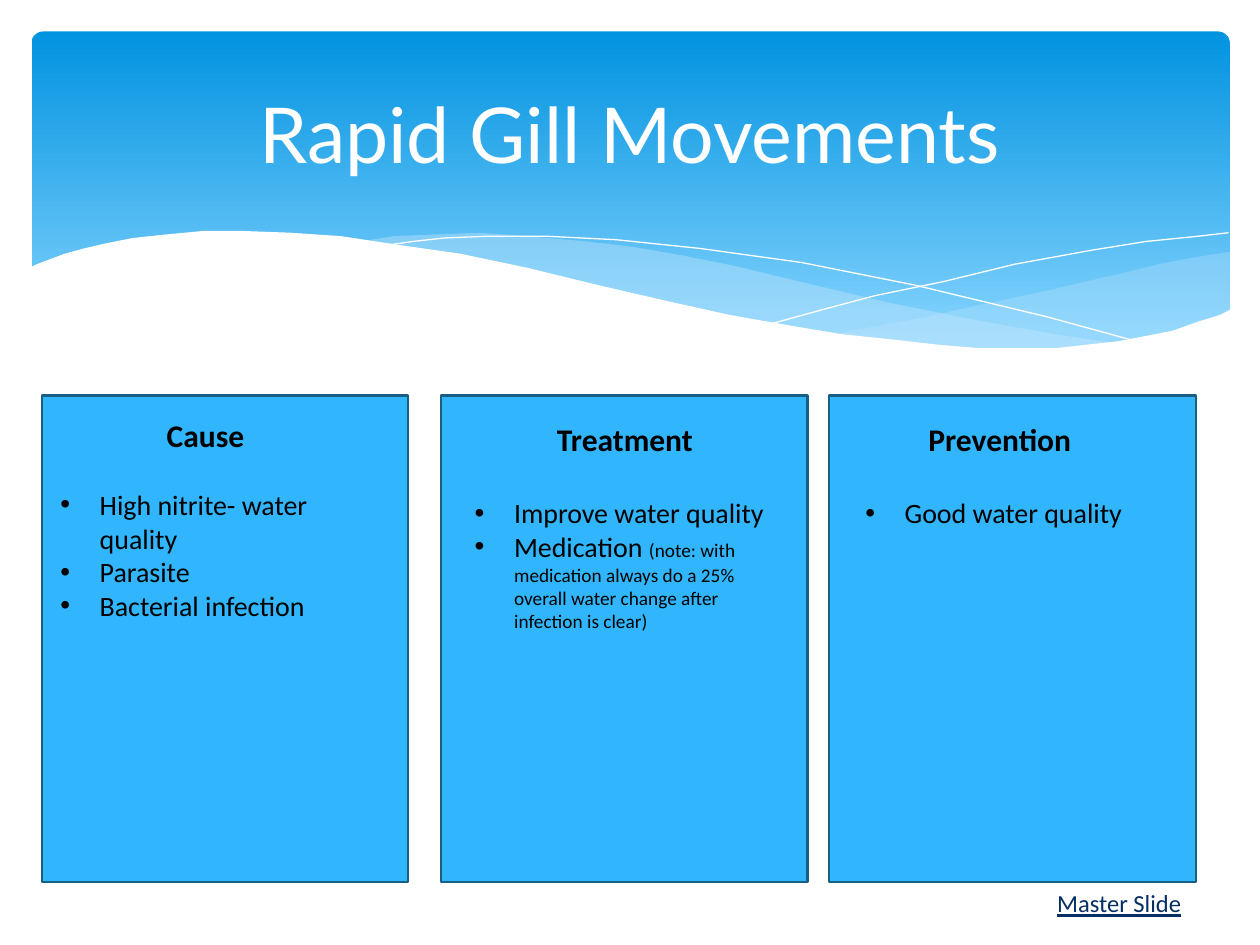
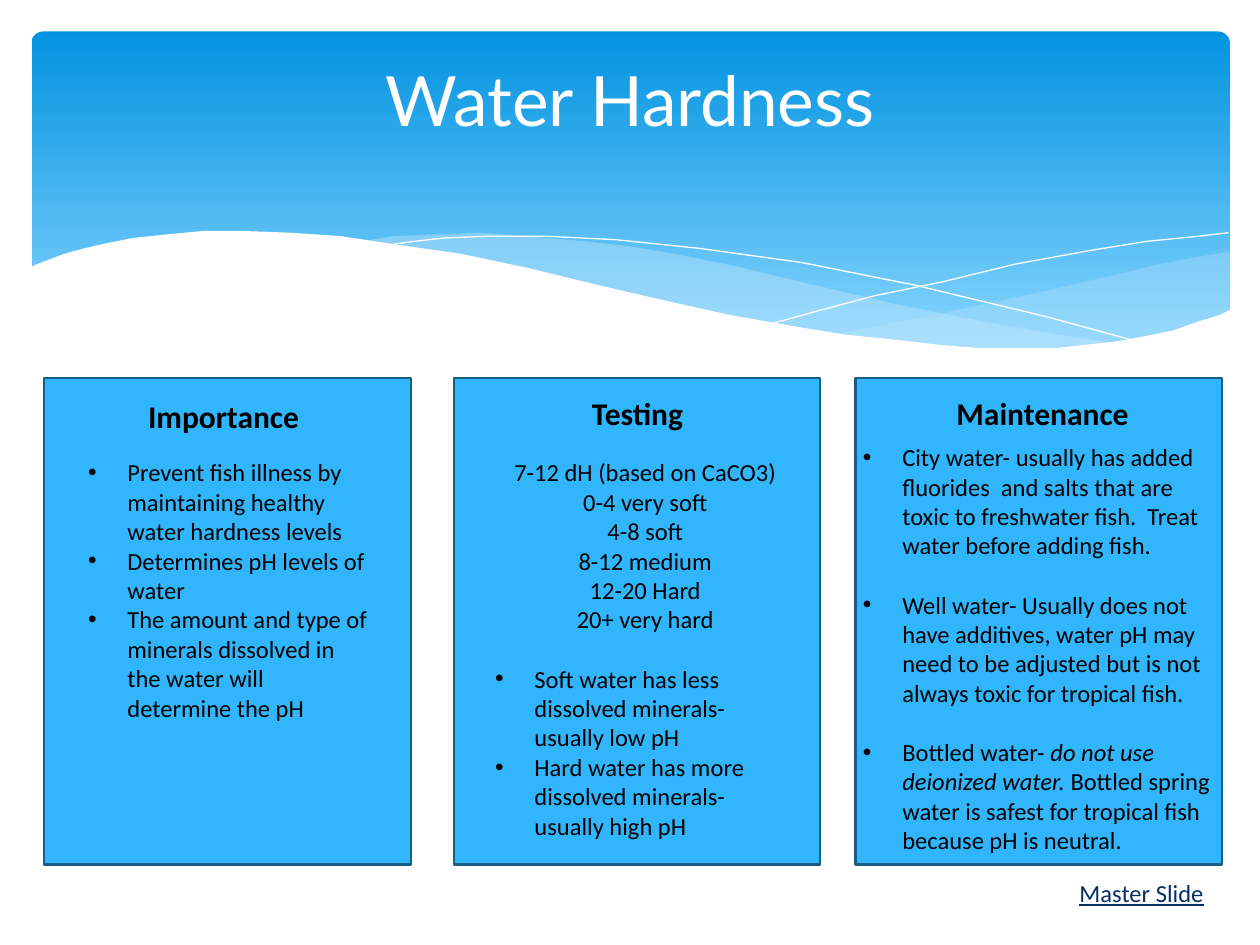
from lxml import etree
from pptx import Presentation
from pptx.dml.color import RGBColor
from pptx.enum.shapes import MSO_SHAPE
from pptx.enum.text import MSO_ANCHOR, PP_ALIGN
from pptx.oxml.ns import qn
from pptx.util import Pt


def rgb(value):
    return RGBColor.from_string(value)


def add_text(s, box, paras, face="Calibri", color="000000", anchor=MSO_ANCHOR.TOP):
    tf = s.shapes.add_textbox(*map(Pt, box)).text_frame
    tf.word_wrap = True
    tf.vertical_anchor = anchor
    for i, (kind, gap, runs) in enumerate(paras):
        p = tf.paragraphs[0] if i == 0 else tf.add_paragraph()
        p.alignment = PP_ALIGN.CENTER if kind == "center" else PP_ALIGN.LEFT
        p.space_before = Pt(gap)
        if kind == "bullet":
            pPr = p._p.get_or_add_pPr()
            pPr.set("marL", str(Pt(22.5)))
            pPr.set("indent", str(-Pt(22.5)))
            etree.SubElement(pPr, qn("a:buFont")).set("typeface", "Arial")
            etree.SubElement(pPr, qn("a:buChar")).set("char", "•")
        for text, fmt in runs:
            r = p.add_run()
            r.text = text
            r.font.name = face
            r.font.color.rgb = rgb(color)
            for name, value in fmt.items():
                setattr(r.font, name, value)


HEAD = {"size": Pt(18), "bold": True}
BODY = {"size": Pt(16)}
NOTE = {"size": Pt(11)}
SMALL = {"size": Pt(14)}
ITALIC = {"size": Pt(14), "italic": True}
LINK = {"size": Pt(14), "underline": True}

right_wave = [
    (702, 144), (682.6, 146.9), (662.4, 151.2), (641.5, 155.5), (619.9, 160.6),
    (599, 165.6), (560.9, 174.2), (524.9, 182.2), (475.9, 190.8), (507.6, 194.4),
    (536.4, 197.3), (562.3, 199.4), (586.1, 200.2), (608.4, 199.4), (627.8, 197.3),
    (645.8, 194.4), (663.1, 190.8), (678.2, 186.5), (702.7, 177.8), (702.7, 144)]
middle_wave = [
    (643, 196.6), (602.6, 190.8), (558, 182.9), (508.3, 172.8), (452.9, 159.8),
    (420.5, 151.9), (389.5, 146.2), (361.4, 141.1), (334.8, 137.5), (302.4, 134.6),
    (273.6, 133.2), (247.7, 133.9), (225.4, 135.4), (205.9, 137.5), (232.6, 141.1),
    (260.6, 146.2), (290.9, 151.9), (323.3, 159.8), (381.6, 172.8), (432.7, 183.6),
    (478.8, 191.5), (520.6, 197.3), (556.6, 199.4), (588.9, 200.2), (617.8, 199.4)]
falling_line = [
    (222.5, 140.4), (236.2, 138.2), (254.2, 136.1), (278.6, 134.6), (311.8, 134.6),
    (352.1, 136.8), (400.3, 141.8), (457.9, 149.8), (523.4, 162.7), (598.3, 180.7),
    (653, 195.8)]
rising_line = [
    (441.4, 185), (470.2, 177.1), (500.4, 169.2), (538.6, 160.6), (580.3, 151.2),
    (623.5, 143.3), (655.2, 138.2), (684.7, 134.6), (702, 133.2)]
white_wave = [
    (16.6, 153.4), (20.9, 151.2), (28.8, 147.6), (37.4, 144.7), (48.2, 141.8),
    (61.2, 139), (76.3, 136.1), (95, 133.9), (115.9, 132.5), (139, 132.5),
    (165.6, 133.2), (195.1, 135.4), (227.5, 139.7), (262.8, 145.4), (301, 153.4),
    (342, 163.4), (380.9, 172.1), (416.9, 180), (450.7, 185.8), (481, 190.8),
    (509.8, 194.4), (535.7, 197.3), (560.2, 198.7), (582.5, 199.4), (602.6, 198.7),
    (621.4, 197.3), (638.6, 195.1), (655.2, 192.2), (669.6, 188.6), (684, 184.3),
    (697, 180), (703.4, 177.1), (703.4, 236.9), (16.6, 236.9)]
waves = [
    (right_wave, "C6E7FC", 29),
    (middle_wave, "C6E7FC", 40),
    (falling_line, None, None),
    (rising_line, None, None),
    (white_wave, "FFFFFF", 100)]

slides = [
    {
        "title": ("Rapid Gill Movements", 44, (36, 26.6, 648, 98.6), MSO_ANCHOR.MIDDLE),
        "cards": (226, [23.8, 252, 473.8]),
        "link": (597, 504),
        "texts": [
            ((27.4, 234, 180, 147.6), [
                ("center", 0, [("Cause", HEAD)]),
                ("bullet", 19.5, [("High nitrite- water quality", BODY)]),
                ("bullet", 0, [("Parasite", BODY)]),
                ("bullet", 0, [("Bacterial infection", BODY)])]),
            ((264.2, 236.2, 185.8, 200), [
                ("center", 0, [("Treatment", HEAD)]),
                ("bullet", 22, [("Improve water quality", BODY)]),
                ("bullet", 0, [
                    ("Medication ", BODY),
                    ("(note: with medication always do a 25% overall water change "
                     "after infection is clear)", NOTE)])]),
            ((487.4, 236.2, 167.8, 70.6), [
                ("center", 0, [("Prevention", HEAD)]),
                ("bullet", 22, [("Good water quality", BODY)])]),
        ],
    },
    {
        "title": ("Water Hardness", 39.6, (36, 29, 648, 96), MSO_ANCHOR.TOP),
        "cards": (216, [25.2, 259.2, 488.9]),
        "link": (609.8, 498.2),
        "texts": [
            ((67.7, 223.2, 120.2, 28.8), [("center", 0, [("Importance", HEAD)])]),
            ((289.4, 221.8, 149.8, 28.8), [("center", 0, [("Testing", HEAD)])]),
            ((535.7, 221.8, 120.2, 28.8), [("center", 0, [("Maintenance", HEAD)])]),
            ((43.2, 257.8, 174.2, 181.4), [
                ("bullet", 0, [(t, SMALL)]) for t in (
                    "Prevent fish illness by maintaining healthy water hardness levels",
                    "Determines pH levels of water",
                    "The amount and type of minerals dissolved in the water will "
                    "determine the pH")]),
            ((275.8, 257.8, 185.8, 249.8), [
                ("center", 0, [(t, SMALL)]) for t in (
                    "7-12 dH (based on CaCO3)", "0-4 very soft", "4-8 soft",
                    "8-12 medium", "12-20 Hard", "20+ very hard")] + [
                ("bullet", 17, [("Soft water has less dissolved minerals- "
                                 "usually low pH", SMALL)]),
                ("bullet", 0, [("Hard water has more dissolved minerals- "
                                "usually high pH", SMALL)])]),
            ((486, 249.1, 219.6, 278.6), [
                ("bullet", 0, [("City water- usually has added fluorides  and salts that are "
                                "toxic to freshwater fish.  Treat water before adding fish.",
                                SMALL)]),
                ("bullet", 17, [("Well water- Usually does not have additives, water pH may "
                                 "need to be adjusted but is not always toxic for tropical "
                                 "fish.", SMALL)]),
                ("bullet", 17, [
                    ("Bottled water- ", SMALL),
                    ("do not use deionized water. ", ITALIC),
                    ("Bottled spring water is safest for tropical fish because pH is "
                     "neutral.", SMALL)])]),
        ],
    },
]

prs = Presentation()
prs.slide_width, prs.slide_height = Pt(720), Pt(540)

for data in slides:
    s = prs.slides.add_slide(prs.slide_layouts[6])

    sp = s.shapes.add_shape(MSO_SHAPE.ROUNDED_RECTANGLE, Pt(18), Pt(18), Pt(684.7), Pt(194.4))
    sp.adjustments[0] = 0.034
    sp.shadow.inherit = False
    sp.line.fill.background()
    sp.fill.gradient()
    sp.fill.gradient_angle = 270
    for stop, color, position in zip(sp.fill.gradient_stops, ("0293E0", "83D3FE"), (0, 0.9)):
        stop.color.rgb = rgb(color)
        stop.position = position

    for points, color, opacity in waves:
        builder = s.shapes.build_freeform(*points[0], scale=Pt(1))
        builder.add_line_segments(points[1:], close=color is not None)
        sp = builder.convert_to_shape()
        sp.shadow.inherit = False
        if color is None:
            sp.fill.background()
            sp.line.color.rgb = rgb("FFFFFF")
            sp.line.width = Pt(0)
            continue
        sp.line.fill.background()
        sp.fill.solid()
        sp.fill.fore_color.rgb = rgb(color)
        if opacity < 100:
            clr = sp._element.spPr.find(qn("a:solidFill")).find(qn("a:srgbClr"))
            etree.SubElement(clr, qn("a:alpha")).set("val", str(opacity * 1000))

    top, lefts = data["cards"]
    for left in lefts:
        sp = s.shapes.add_shape(MSO_SHAPE.RECTANGLE, Pt(left), Pt(top), Pt(209.5), Pt(278))
        sp.shadow.inherit = False
        sp.fill.solid()
        sp.fill.fore_color.rgb = rgb("31B6FD")
        sp.line.color.rgb = rgb("195F84")
        sp.line.width = Pt(1.25)

    title, size, box, anchor = data["title"]
    add_text(s, box, [("center", 0, [(title, {"size": Pt(size)})])], "Lato", "FFFFFF", anchor)
    for box, paras in data["texts"]:
        add_text(s, box, paras)
    add_text(s, (*data["link"], 100, 24.5), [("left", 0, [("Master Slide", LINK)])],
             color="052E65")

prs.save("out.pptx")
